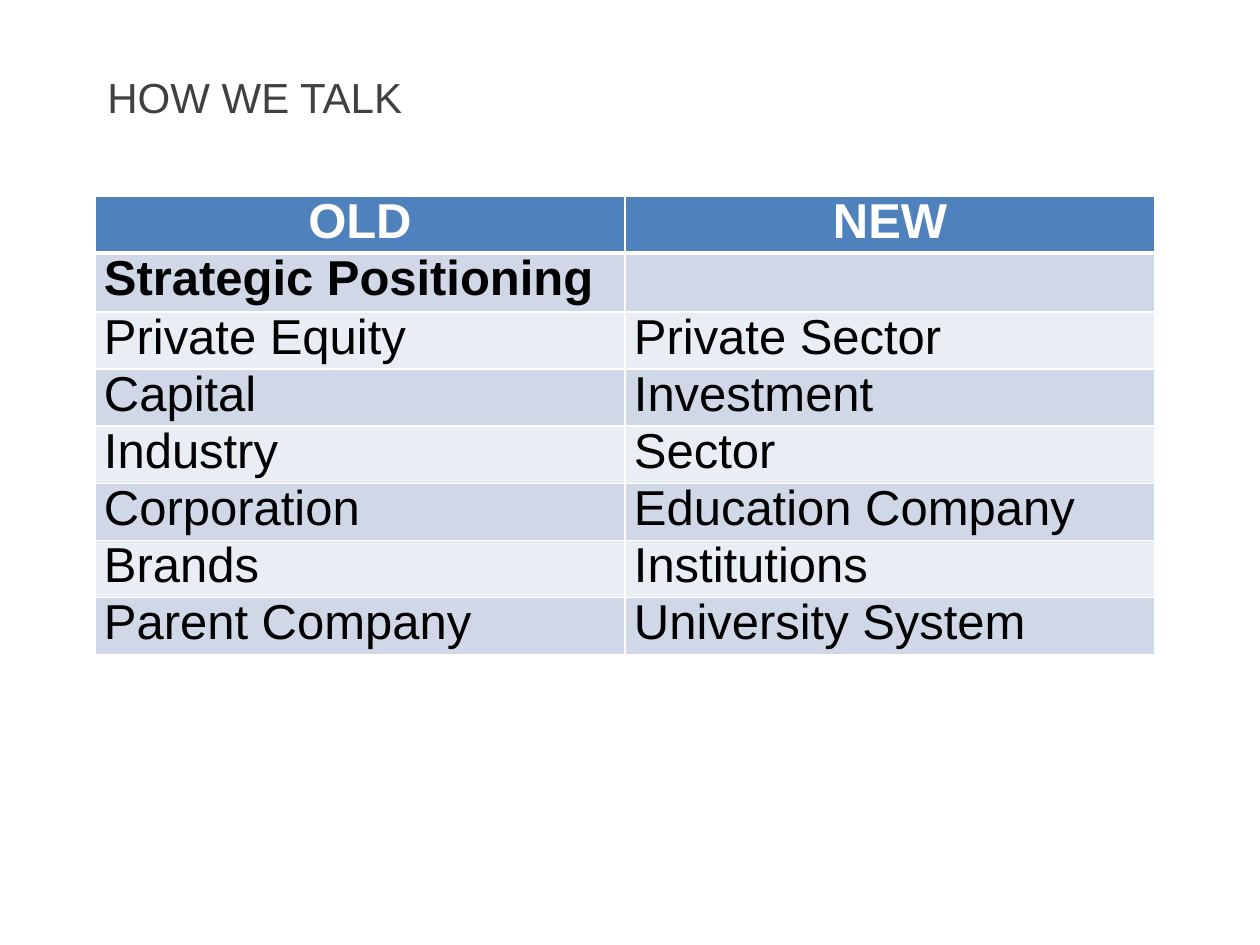
from dataclasses import dataclass

from lxml import etree
from pptx import Presentation
from pptx import util as u
from pptx.dml import color
from pptx.enum import text
from pptx.oxml import ns

TITLE = "HOW WE TALK"
HEADER = ("OLD", "NEW")
ROWS = [
    ("Strategic Positioning", ""),
    ("Private Equity", "Private Sector"),
    ("Capital", "Investment"),
    ("Industry", "Sector"),
    ("Corporation", "Education Company"),
    ("Brands", "Institutions"),
    ("Parent Company", "University System"),
]
SECTION_ROW = 1


@dataclass(frozen=True)
class Theme:
    font: str = "Arial"
    title_size: int = 24
    cell_size: int = 28
    title: str = "404040"
    ink: str = "000000"
    white: str = "FFFFFF"
    header: str = "4F81BD"
    bands: tuple = ("E9EDF4", "D0D8E8")


THEME = Theme()
SCALE = 914400 / 126
LEFT, TOP, COLUMN, ROW = 95, 196, 530, 54
INSET = 9


def px(length):
    return u.Emu(round(length * SCALE))


def write(frame, words, size, ink, bold=False, align=text.PP_ALIGN.LEFT, spacing=1.0):
    para = frame.paragraphs[0]
    para.alignment = align
    para.line_spacing = spacing
    para.font.size = u.Pt(size)
    if words:
        span = para.add_run()
        span.text = words
        span.font.name = THEME.font
        span.font.size = u.Pt(size)
        span.font.bold = bold
        span.font.color.rgb = color.RGBColor.from_string(ink)
    else:
        end = etree.SubElement(para._p, ns.qn("a:endParaRPr"))
        end.set("sz", str(size * 100))


def set_borders(cell, bottom):
    properties = cell._tc.get_or_add_tcPr()
    for index, (side, width) in enumerate(
        (("lnL", 1), ("lnR", 1), ("lnT", 1), ("lnB", bottom))
    ):
        line = etree.Element(ns.qn(f"a:{side}"), w=str(u.Pt(width)))
        fill = etree.SubElement(line, ns.qn("a:solidFill"))
        etree.SubElement(fill, ns.qn("a:srgbClr"), val=THEME.white)
        properties.insert(index, line)


def add_title(slide):
    box = slide.shapes.add_textbox(px(LEFT), px(42), px(903), px(110))
    box.text_frame.word_wrap = True
    box.text_frame.vertical_anchor = text.MSO_ANCHOR.MIDDLE
    write(box.text_frame, TITLE, THEME.title_size, THEME.title)


def add_terms(slide):
    rows = [HEADER, *ROWS]
    table = slide.shapes.add_table(
        len(rows), len(HEADER), px(LEFT), px(TOP),
        px(COLUMN * len(HEADER)), px(ROW * len(rows)),
    ).table
    for i, row in enumerate(rows):
        heading = i == 0
        for j, words in enumerate(row):
            cell = table.cell(i, j)
            cell.margin_left = cell.margin_right = px(INSET)
            cell.margin_top = cell.margin_bottom = 0
            cell.fill.solid()
            cell.fill.fore_color.rgb = color.RGBColor.from_string(
                THEME.header if heading else THEME.bands[i % 2]
            )
            set_borders(cell, bottom=3 if heading else 1)
            write(
                cell.text_frame, words, THEME.cell_size,
                THEME.white if heading else THEME.ink,
                bold=i <= SECTION_ROW,
                align=text.PP_ALIGN.CENTER if heading else text.PP_ALIGN.LEFT,
                spacing=0.97,
            )


def main():
    deck = Presentation()
    deck.slide_width, deck.slide_height = px(1260), px(945)
    slide = deck.slides.add_slide(deck.slide_layouts[6])
    add_title(slide)
    add_terms(slide)
    deck.save("out.pptx")


if __name__ == "__main__":
    main()
